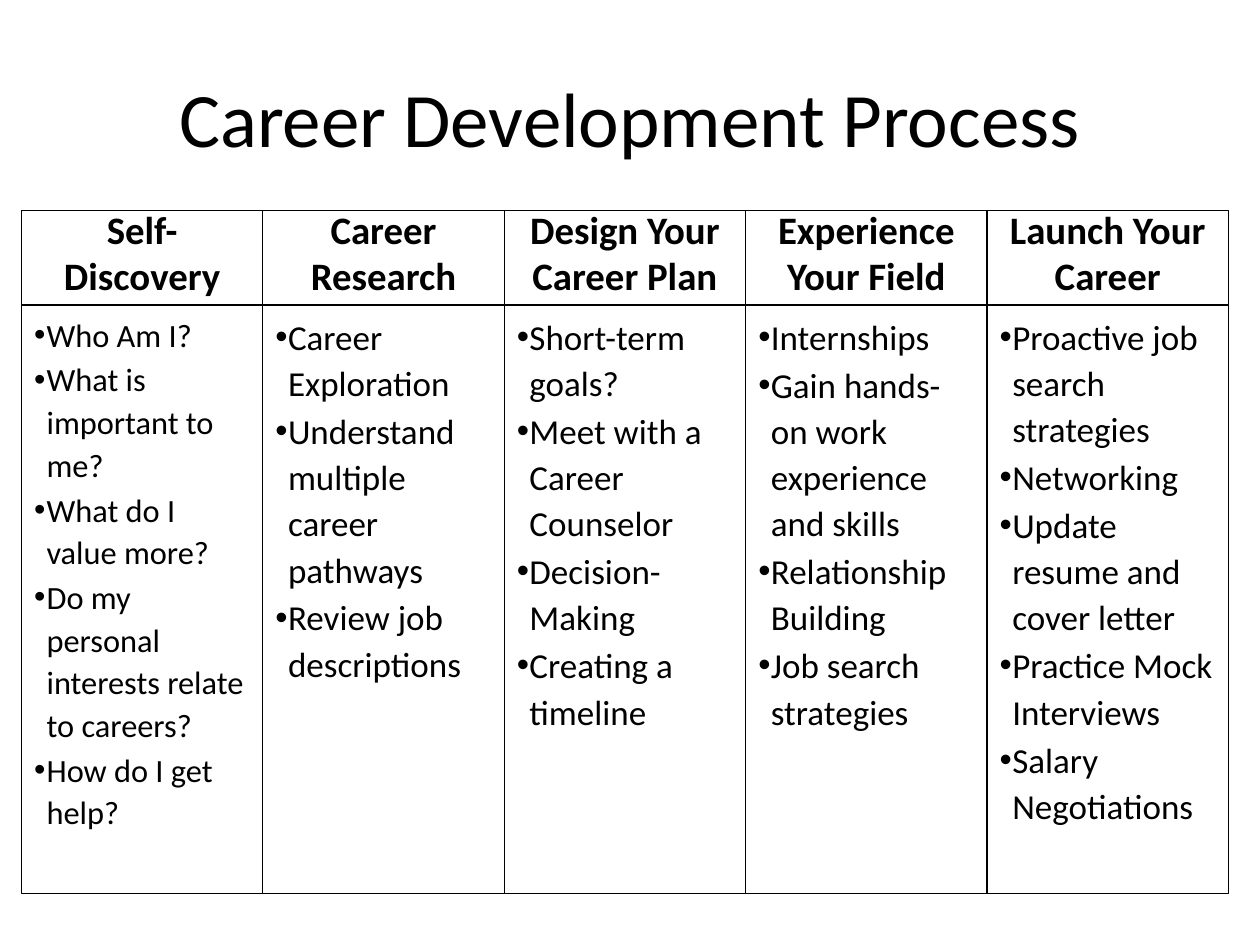
from dataclasses import dataclass

from pptx import Presentation
from pptx.dml.color import RGBColor
from pptx.enum.text import MSO_ANCHOR, MSO_AUTO_SIZE, PP_ALIGN
from pptx.util import Inches, Pt


@dataclass(frozen=True)
class Theme:
    """Colours, font and type sizes of the slide."""
    ink: RGBColor = RGBColor(0, 0, 0)
    font: str = "Calibri"
    title: float = 44
    header: float = 22.2
    body: float = 20
    dense_body: float = 18.5
    border: float = 0.75


THEME = Theme()
GRID_LEFT, GRID_TOP, COLUMN_WIDTH = 0.17, 1.67, 1.916
HEADER_HEIGHT, LIST_HEIGHT = 0.75, 4.67

STAGES = [
    ("Self-Discovery", THEME.dense_body,
     ["Who Am I?", "What is important to me?", "What do I value more?",
      "Do my personal interests relate to careers?", "How do I get help?"]),
    ("Career Research", THEME.body,
     ["Career Exploration", "Understand multiple career pathways",
      "Review job descriptions"]),
    ("Design Your Career Plan", THEME.body,
     ["Short-term goals?", "Meet with a Career Counselor",
      "Decision-Making", "Creating a timeline"]),
    ("Experience Your Field", THEME.body,
     ["Internships", "Gain hands-on work experience and skills",
      "Relationship Building", "Job search strategies"]),
    ("Launch Your Career", THEME.body,
     ["Proactive job search strategies", "Networking",
      "Update resume and cover letter", "Practice Mock Interviews",
      "Salary Negotiations"]),
]


def place(shape, left, top, width, height):
    """Position a shape in inches."""
    shape.left, shape.top = Inches(left), Inches(top)
    shape.width, shape.height = Inches(width), Inches(height)


def write(shape, text, size, anchor, bold=False):
    """Fill a placeholder with text and format its runs."""
    frame = shape.text_frame
    frame.text = text
    frame.word_wrap = True
    frame.auto_size = MSO_AUTO_SIZE.NONE
    frame.vertical_anchor = anchor
    for paragraph in frame.paragraphs:
        for run in paragraph.runs:
            run.font.name, run.font.size = THEME.font, Pt(size)
            run.font.bold = bold
            run.font.color.rgb = THEME.ink


def add_border(shape):
    """Outline a cell of the grid."""
    shape.line.color.rgb = THEME.ink
    shape.line.width = Pt(THEME.border)


def fill_header(shape, column, text):
    """Set the heading of one stage."""
    place(shape, GRID_LEFT + column * COLUMN_WIDTH, GRID_TOP,
          COLUMN_WIDTH, HEADER_HEIGHT)
    add_border(shape)
    write(shape, text, THEME.header, MSO_ANCHOR.BOTTOM, bold=True)
    shape.text_frame.paragraphs[0].alignment = PP_ALIGN.CENTER


def fill_list(shape, column, items, size):
    """Set the bulleted list of one stage."""
    place(shape, GRID_LEFT + column * COLUMN_WIDTH, GRID_TOP + HEADER_HEIGHT,
          COLUMN_WIDTH, LIST_HEIGHT)
    add_border(shape)
    write(shape, "\n".join(items), size, MSO_ANCHOR.TOP)
    for paragraph in shape.text_frame.paragraphs:
        paragraph.line_spacing = 1.1
        paragraph.space_before = Pt(1)
        properties = paragraph._p.get_or_add_pPr()
        properties.set("marL", str(Inches(0.1)))
        properties.set("indent", str(-Inches(0.1)))


def stage_placeholders(slide):
    """Return the heading and list placeholders, one pair for each stage."""
    layout_pair = [shape for shape in slide.slide_layout.placeholders
                   if shape.placeholder_format.idx in (1, 2)]
    for _ in STAGES[2:]:
        for placeholder in layout_pair:
            slide.shapes.clone_placeholder(placeholder)
    shapes = list(slide.shapes)[1:]
    return zip(shapes[::2], shapes[1::2])


def main():
    """Build and save the slide."""
    presentation = Presentation()
    presentation.slide_width, presentation.slide_height = Inches(10), Inches(7.5)
    slide = presentation.slides.add_slide(
        presentation.slide_layouts.get_by_name("Comparison"))
    title = slide.shapes.title
    place(title, 0.5, 0.3, 9, 1.25)
    write(title, "Career Development Process", THEME.title, MSO_ANCHOR.MIDDLE)
    title.text_frame.paragraphs[0].alignment = PP_ALIGN.CENTER
    pairs = stage_placeholders(slide)
    for column, ((header, body), (name, size, items)) in enumerate(zip(pairs, STAGES)):
        fill_header(header, column, name)
        fill_list(body, column, items, size)
    presentation.save("out.pptx")


if __name__ == "__main__":
    main()
